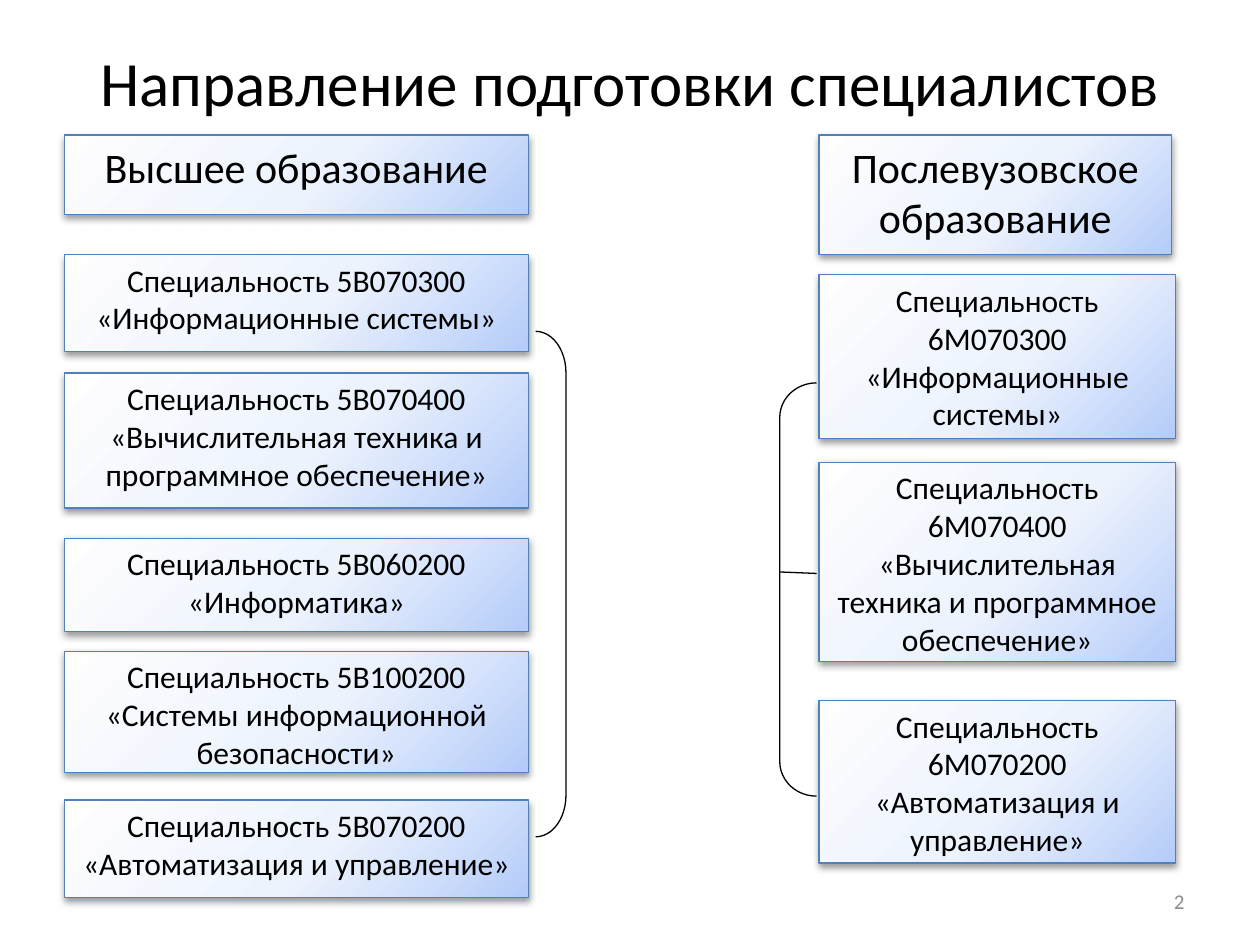
from pptx import Presentation
from pptx.dml.color import RGBColor
from pptx.enum.shapes import MSO_CONNECTOR, MSO_SHAPE
from pptx.enum.text import MSO_ANCHOR, PP_ALIGN
from pptx.oxml import parse_xml
from pptx.oxml.ns import nsdecls, qn
from pptx.util import Cm, Pt

BLACK = RGBColor(0x00, 0x00, 0x00)
GREY = RGBColor(0x8C, 0x8C, 0x8C)
BLUE = RGBColor(0x4F, 0x81, 0xBD)
GRADIENT_STOPS = [
    (0, RGBColor(0xFE, 0xFE, 0xFF)),
    (55, RGBColor(0xED, 0xF3, 0xFD)),
    (100, RGBColor(0xB5, 0xCC, 0xF9)),
]
LEFT_COLUMN, LEFT_WIDTH = 1.3, 9.35
RIGHT_COLUMN, RIGHT_WIDTH = 16.51, 7.19
HEADER_TOP = 2.72

HIGHER_EDUCATION = [
    (5.13, 1.96, "Специальность 5В070300 «Информационные системы»"),
    (7.52, 2.72, "Специальность 5В070400 «Вычислительная техника и программное обеспечение»"),
    (10.85, 1.88, "Специальность 5В060200 «Информатика»"),
    (13.13, 2.44, "Специальность 5В100200 «Системы информационной безопасности»"),
    (16.13, 1.96, "Специальность 5В070200 «Автоматизация и управление»"),
]
POSTGRADUATE_EDUCATION = [
    (5.54, 3.3, "Специальность 6М070300 «Информационные системы»"),
    (9.32, 4.01, "Специальность 6М070400 «Вычислительная техника и программное обеспечение»"),
    (14.12, 3.28, "Специальность 6М070200 «Автоматизация и управление»"),
]


def write_text(shape, text, size=18, color=BLACK, align=PP_ALIGN.CENTER,
               anchor=MSO_ANCHOR.TOP, space_after=0):
    frame = shape.text_frame
    frame.word_wrap = True
    frame.vertical_anchor = anchor
    paragraph = frame.paragraphs[0]
    paragraph.alignment = align
    paragraph.space_after = Pt(space_after)
    span = paragraph.add_run()
    span.text = text
    span.font.name = "Calibri"
    span.font.size = Pt(size)
    span.font.color.rgb = color


def style_line(line, color):
    line.color.rgb = color
    line.width = Pt(0.75)


def fill_with_gradient(shape):
    stops = "".join(
        f'<a:gs pos="{position * 1000}"><a:srgbClr val="{color}"/></a:gs>'
        for position, color in GRADIENT_STOPS
    )
    gradient = parse_xml(
        f'<a:gradFill {nsdecls("a")} rotWithShape="1"><a:gsLst>{stops}</a:gsLst>'
        '<a:path path="circle">'
        '<a:fillToRect l="-40000" t="-90000" r="140000" b="190000"/>'
        '</a:path></a:gradFill>'
    )
    shape._element.spPr.find(qn("a:prstGeom")).addnext(gradient)


def add_soft_shadow(shape):
    shape.shadow.inherit = False
    shadow = parse_xml(
        f'<a:outerShdw {nsdecls("a")} blurRad="{Pt(4.1)}" dist="{Pt(2)}" '
        'dir="5400000" rotWithShape="0"><a:srgbClr val="000000">'
        '<a:alpha val="40000"/></a:srgbClr></a:outerShdw>'
    )
    shape._element.spPr.find(qn("a:effectLst")).append(shadow)


def add_card(page, left, top, width, height, text, size=18):
    card = page.shapes.add_shape(
        MSO_SHAPE.RECTANGLE, Cm(left), Cm(top), Cm(width), Cm(height))
    fill_with_gradient(card)
    style_line(card.line, BLUE)
    add_soft_shadow(card)
    write_text(card, text, size=size, space_after=10)


def add_column(page, left, width, specialties):
    for top, height, text in specialties:
        add_card(page, left, top, width, height, text)


def add_bracket(page, kind, left, top, width, height, curve):
    bracket = page.shapes.add_shape(
        kind, Cm(left), Cm(top), Cm(width), Cm(height))
    bracket.adjustments[0] = curve
    bracket.shadow.inherit = False
    bracket.fill.background()
    style_line(bracket.line, BLACK)


def add_branch(page, start_x, start_y, end_x, end_y):
    branch = page.shapes.add_connector(
        MSO_CONNECTOR.STRAIGHT, Cm(start_x), Cm(start_y), Cm(end_x), Cm(end_y))
    style_line(branch.line, BLACK)
    branch._element.spPr.append(parse_xml(f'<a:effectLst {nsdecls("a")}/>'))


def add_label(page, left, top, width, height, text, **text_format):
    label = page.shapes.add_textbox(Cm(left), Cm(top), Cm(width), Cm(height))
    write_text(label, text, anchor=MSO_ANCHOR.MIDDLE, **text_format)


def main():
    deck = Presentation()
    deck.slide_width, deck.slide_height = Cm(25.4), Cm(19.05)
    page = deck.slides.add_slide(deck.slide_layouts[6])

    add_column(page, RIGHT_COLUMN, RIGHT_WIDTH, POSTGRADUATE_EDUCATION)
    add_bracket(page, MSO_SHAPE.LEFT_BRACKET, 15.72, 7.72, 0.74, 8.33, 0.94)
    add_branch(page, 16.46, 11.56, 15.72, 11.53)

    add_column(page, LEFT_COLUMN, LEFT_WIDTH, HIGHER_EDUCATION)
    add_bracket(page, MSO_SHAPE.RIGHT_BRACKET, 10.8, 6.68, 0.61, 10.19, 1.37)

    add_card(page, LEFT_COLUMN, HEADER_TOP, LEFT_WIDTH, 1.6,
             "Высшее образование", size=24)
    add_card(page, RIGHT_COLUMN, HEADER_TOP, 7.11, 2.41,
             "Послевузовское образование", size=24)

    add_label(page, 1.27, 0.76, 22.86, 1.75,
              "Направление подготовки специалистов", size=36)
    add_label(page, 18.21, 17.65, 5.92, 1.02, "2",
              size=12, color=GREY, align=PP_ALIGN.RIGHT)
    deck.save("out.pptx")


if __name__ == "__main__":
    main()
